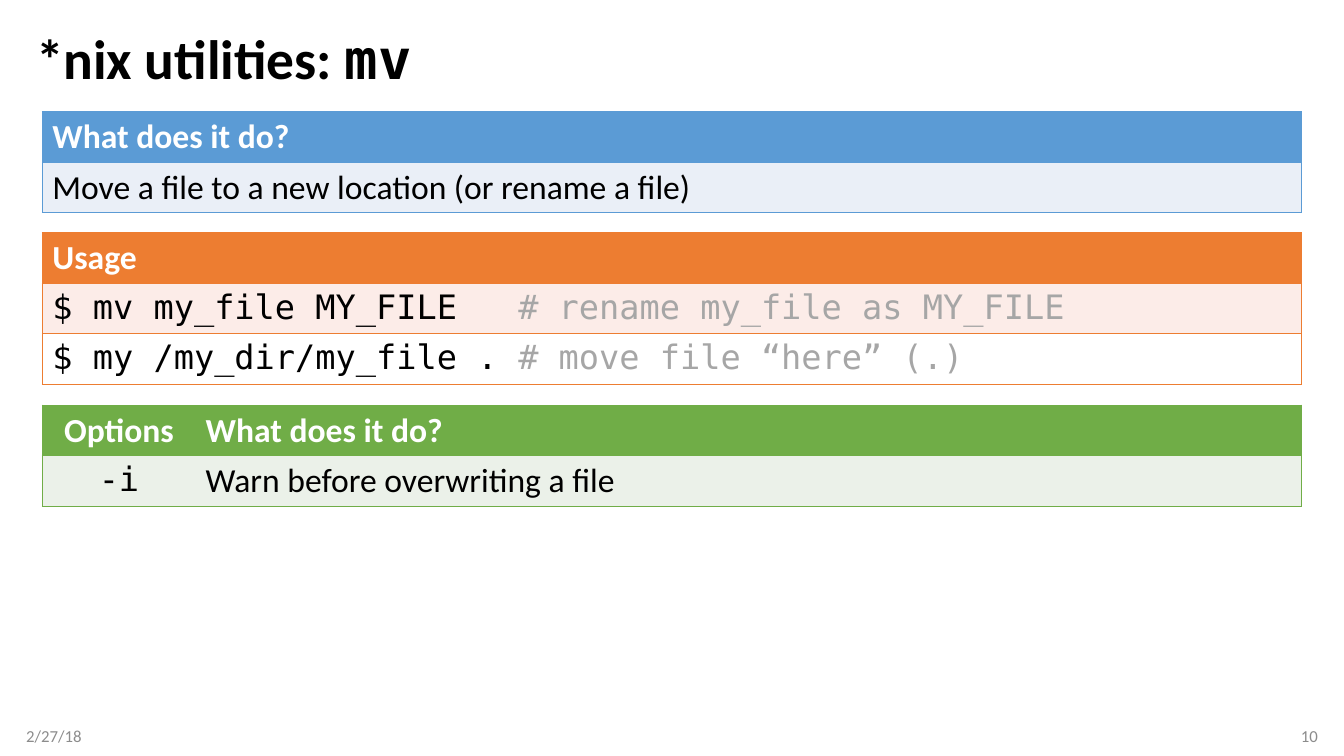
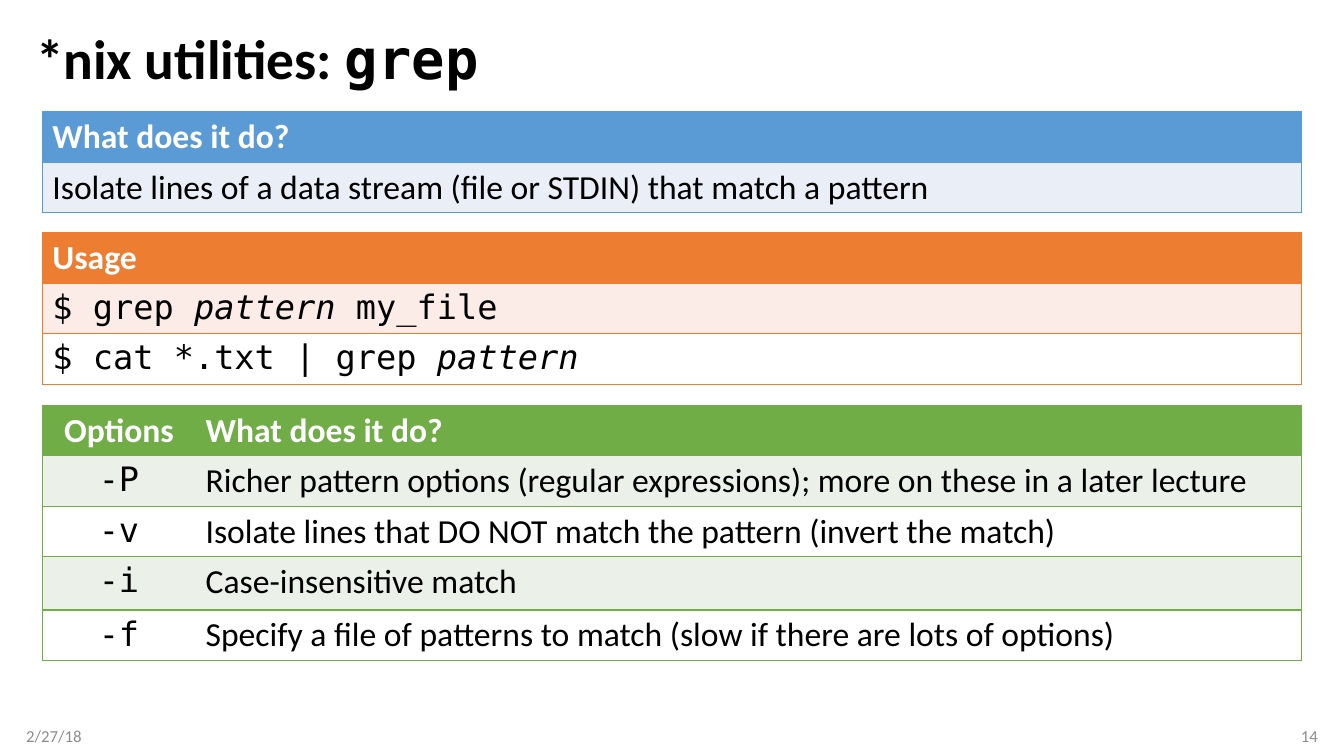
"""Build two reference slides on the *nix utilities mv and grep."""
from lxml import etree
from pptx import Presentation
from pptx.dml.color import RGBColor
from pptx.enum.text import MSO_ANCHOR, PP_ALIGN
from pptx.oxml.ns import qn
from pptx.util import Inches, Pt

LEFT, CENTER, RIGHT = PP_ALIGN.LEFT, PP_ALIGN.CENTER, PP_ALIGN.RIGHT
MIDDLE = MSO_ANCHOR.MIDDLE
SANS, MONO = "Calibri", "DejaVu Sans Mono"
COLORS = {
    "text": "000000", "white": "FFFFFF", "footer": "8C8C8C", "comment": "A6A6A6",
    "purpose": "5B9BD5", "purpose_band": "EAEFF7",
    "usage": "ED7D31", "usage_band": "FCECE8",
    "options": "70AD47", "options_band": "EBF1E9",
}
STYLES = {
    "title": (SANS, 39.6, "text", True, False),
    "command": (MONO, 39.6, "text", True, False),
    "footer": (SANS, 12, "footer", False, False),
    "header": (SANS, 24, "white", True, False),
    "body": (SANS, 24, "text", False, False),
    "code": (MONO, 24, "text", False, False),
    "argument": (MONO, 24, "text", False, True),
    "comment": (MONO, 24, "comment", False, False),
}
MARGIN, BOX_WIDTH = 0.26, 12.81
FOOTER_WIDTH = 3
TABLE_LEFT, TABLE_WIDTH, OPTION_WIDTH = 0.42, 12.49, 1.52
TABLE_TOPS = {"purpose": 1.11, "usage": 2.31, "options": 4.02}
ROW_HEIGHT = 0.49
COMMENT_TAB = 4.62

UTILITIES = [
    {
        "command": "mv",
        "page": "10",
        "purpose": "Move a file to a new location (or rename a file)",
        "usage": [
            [("$ mv my_file MY_FILE\t", "code"), ("# rename my_file as MY_FILE", "comment")],
            [("$ my /my_dir/my_file .\t", "code"), ("# move file “here” (.)", "comment")],
        ],
        "options": [("-i", "Warn before overwriting a file")],
    },
    {
        "command": "grep",
        "page": "14",
        "purpose": "Isolate lines of a data stream (file or STDIN) that match a pattern",
        "usage": [
            [("$ grep ", "code"), ("pattern ", "argument"), ("my_file", "code")],
            [("$ cat *.txt | grep ", "code"), ("pattern", "argument")],
        ],
        "options": [
            ("-P", "Richer pattern options (regular expressions); more on these in a later lecture"),
            ("-v", "Isolate lines that DO NOT match the pattern (invert the match)"),
            ("-i", "Case-insensitive match"),
            ("-f", "Specify a file of patterns to match (slow if there are lots of options)"),
        ],
    },
]


def write_runs(paragraph, runs, align=LEFT):
    paragraph.alignment = align
    for text, style in runs:
        face, size, color, bold, italic = STYLES[style]
        run = paragraph.add_run()
        run.text = text
        run.font.name, run.font.size = face, Pt(size)
        run.font.bold, run.font.italic = bold, italic
        run.font.color.rgb = RGBColor.from_string(COLORS[color])


def add_grid(slide, section, widths, rows):
    grid = slide.shapes.add_table(
        len(rows), len(widths), Inches(TABLE_LEFT), Inches(TABLE_TOPS[section]),
        Inches(TABLE_WIDTH), Inches(ROW_HEIGHT * len(rows))).table
    grid.horz_banding = False
    for column, width in zip(grid.columns, widths):
        column.width = Inches(width)
    for r, row in enumerate(rows):
        grid.rows[r].height = Inches(ROW_HEIGHT)
        fill = section if r == 0 else f"{section}_band" if r % 2 else "white"
        for c, runs in enumerate(row):
            cell = grid.cell(r, c)
            paragraph = cell.text_frame.paragraphs[0]
            write_runs(paragraph, runs, CENTER if c < len(widths) - 1 else LEFT)
            if any("\t" in text for text, style in runs):
                tabs = etree.SubElement(paragraph._p.get_or_add_pPr(), qn("a:tabLst"))
                etree.SubElement(tabs, qn("a:tab"), pos=str(Inches(COMMENT_TAB)), algn="l")
            outer = {"L": c == 0, "R": c == len(widths) - 1, "T": True, "B": True}
            for side, visible in outer.items():
                line = etree.SubElement(cell._tc.get_or_add_tcPr(), qn(f"a:ln{side}"), w=str(Pt(1)))
                if visible:
                    solid = etree.SubElement(line, qn("a:solidFill"))
                    etree.SubElement(solid, qn("a:srgbClr"), val=COLORS[section])
                else:
                    etree.SubElement(line, qn("a:noFill"))
            cell.fill.solid()
            cell.fill.fore_color.rgb = RGBColor.from_string(COLORS[fill])
    return grid


prs = Presentation()
prs.slide_width, prs.slide_height = Inches(13.33), Inches(7.5)

for utility in UTILITIES:
    slide = prs.slides.add_slide(prs.slide_layouts[6])

    right_footer = MARGIN + BOX_WIDTH - FOOTER_WIDTH
    heading = [("*nix utilities: ", "title"), (utility["command"], "command")]
    for left, top, width, height, inset_left, inset_right, align, runs in [
        (MARGIN, 0.25, BOX_WIDTH, 0.72, 0.1, 0.1, LEFT, heading),
        (MARGIN, 7.1, FOOTER_WIDTH, 0.4, 0, 0.1, LEFT, [("2/27/18", "footer")]),
        (right_footer, 7.1, FOOTER_WIDTH, 0.4, 0.1, 0, RIGHT, [(utility["page"], "footer")]),
    ]:
        frame = slide.shapes.add_textbox(
            Inches(left), Inches(top), Inches(width), Inches(height)).text_frame
        frame.word_wrap = True
        frame.vertical_anchor = MIDDLE
        frame.margin_left, frame.margin_right = Inches(inset_left), Inches(inset_right)
        write_runs(frame.paragraphs[0], runs, align)
        if runs is heading:
            frame.paragraphs[0].line_spacing = 0.9

    question = [("What does it do?", "header")]
    add_grid(slide, "purpose", [TABLE_WIDTH], [[question], [[(utility["purpose"], "body")]]])
    add_grid(slide, "usage", [TABLE_WIDTH],
             [[[("Usage", "header")]]] + [[example] for example in utility["usage"]])
    options = add_grid(
        slide, "options", [OPTION_WIDTH, TABLE_WIDTH - OPTION_WIDTH],
        [[[("Options", "header")], question]]
        + [[[(flag, "code")], [(effect, "body")]] for flag, effect in utility["options"]])
    if len(utility["options"]) > 2:
        options.rows[3].height = Inches(0.53)

prs.save("out.pptx")
